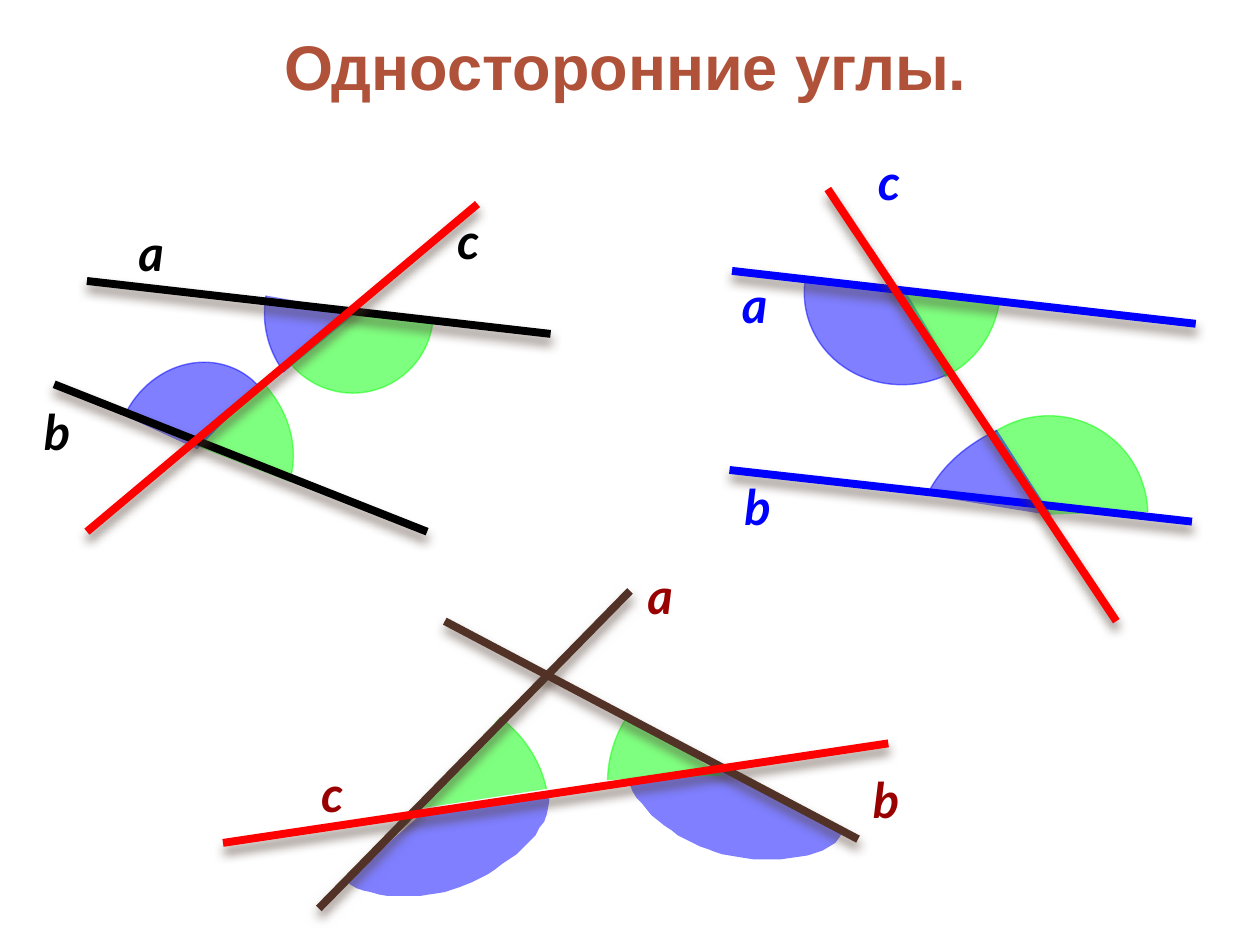
from lxml import etree
from pptx import Presentation
from pptx import util as u
from pptx.dml.color import RGBColor
from pptx.enum import shapes, text
from pptx.oxml.ns import qn

PX = 9144  # 100 px to the inch
COLORS = {
    "title": "B05239", "green": "00FF00", "blue": "0000FF", "black": "000000",
    "red": "FF0000", "brown": "523227", "maroon": "990000", "shadow": "4E3B30",
}

# Each angle: colour, box, rotation, arc start and end
# Each segment: x1, y1, x2, y2; each label: letter, left, top, width
FIGURES = [
    {
        "lines": "black", "letters": "black",
        "angles": [
            ("green", (62, 276, 174, 151), 32.4, 172.36, 209.16),
            ("blue", (210, 171, 148, 153), 193.7, 184.2, 213.79),
            ("blue", (86, 293, 141, 127), 297.9, 160.12, 9.95),
            ("green", (216, 184, 128, 128), 116.9, 150.57, 16.08),
        ],
        "sectors": [],
        "pair": [(69, 223, 437, 265), (43, 305, 339, 422)],
        "transversal": (69, 422, 379, 162),
        "labels": [("a", 100, 172, 41), ("b", 25, 314, 41), ("c", 353, 162, 36)],
    },
    {
        "lines": "blue", "letters": "blue",
        "angles": [
            ("green", (754, 330, 157, 157), 335.7, 156.62, 13.59),
            ("blue", (638, 155, 160, 150), 166.8, 151.64, 11.85),
            ("blue", (756, 302, 157, 214), 254.9, 176.61, 205.51),
            ("green", (637, 150, 157, 157), 73.9, 175.87, 209.95),
        ],
        "sectors": [],
        "pair": [(581, 215, 949, 257), (579, 373, 946, 414)],
        "transversal": (657, 150, 886, 493),
        "labels": [("a", 579, 213, 41), ("b", 581, 373, 41), ("c", 687, 115, 36)],
    },
    {
        "lines": "brown", "letters": "maroon",
        "angles": [
            ("green", (485, 521, 179, 189), 227.8, 185.98, 206.59),
            ("green", (233, 548, 203, 187), 11.5, 179.52, 203.85),
        ],
        # Two Bezier curves, then the vertex of the angle
        "sectors": [
            ([[(435, 630), (442, 659), (397, 691), (370, 702)],
              [(370, 702), (343, 714), (296, 716), (274, 699)]], (337, 644)),
            ([[(669, 660), (657, 686), (601, 685), (573, 678)],
              [(573, 678), (544, 671), (505, 644), (498, 618)]], (582, 611)),
        ],
        "pair": [(253, 721, 500, 469), (353, 493, 681, 666)],
        "transversal": (177, 669, 705, 590),
        "labels": [("a", 504, 444, 41), ("b", 683, 606, 41), ("c", 245, 601, 36)],
    },
]


def rgb(name):
    return RGBColor.from_string(COLORS[name])


def emu(*lengths):
    return [length * PX for length in lengths]


def fill_half_clear(shape, color):
    shape.shadow.inherit = False
    shape.fill.solid()
    shape.fill.fore_color.rgb = rgb(color)
    for tint in shape._element.spPr.iter(qn("a:srgbClr")):
        etree.SubElement(tint, qn("a:alpha"), val="50000")


def add_angle(slide, color, box, rotation, start, end):
    angle = slide.shapes.add_shape(shapes.MSO_SHAPE.ARC, *emu(*box))
    angle.rotation = rotation
    angle.adjustments[0], angle.adjustments[1] = start, end
    angle.line.color.rgb = rgb(color)
    angle.line.width = u.Pt(0.79)
    fill_half_clear(angle, color)


def bezier_points(p0, p1, p2, p3, steps=16):
    for i in range(1, steps + 1):
        t = i / steps
        s = 1 - t
        yield tuple(s**3 * a + 3 * s * s * t * b + 3 * s * t * t * c + t**3 * d
                    for a, b, c, d in zip(p0, p1, p2, p3))


def add_sector(slide, curves, vertex):
    rim = [point for curve in curves for point in bezier_points(*curve)]
    builder = slide.shapes.build_freeform(*curves[0][0], scale=PX)
    builder.add_line_segments(rim + [vertex], close=True)
    sector = builder.convert_to_shape()
    sector.line.fill.background()
    fill_half_clear(sector, "blue")


def add_segment(slide, ends, color):
    segment = slide.shapes.add_connector(shapes.MSO_CONNECTOR.STRAIGHT, *emu(*ends))
    segment.line.color.rgb = rgb(color)
    segment.line.width = u.Pt(4.5)
    # Soft shadow straight below the line
    effects = etree.SubElement(segment._element.spPr, qn("a:effectLst"))
    shadow = etree.SubElement(effects, qn("a:outerShdw"), blurRad=str(u.Pt(6)),
                              dist=str(u.Pt(4)), dir="5400000", rotWithShape="0")
    tint = etree.SubElement(shadow, qn("a:srgbClr"), val=COLORS["shadow"])
    etree.SubElement(tint, qn("a:alpha"), val="60000")


def add_run(paragraph, words, font, size, color, italic=False):
    run = paragraph.add_run()
    run.text = words
    run.font.name, run.font.size = font, u.Pt(size)
    run.font.bold, run.font.italic = True, italic
    run.font.color.rgb = rgb(color)


def add_label(slide, letter, left, top, width, color):
    frame = slide.shapes.add_textbox(*emu(left, top, width, 57)).text_frame
    frame.word_wrap = False
    frame.auto_size = text.MSO_AUTO_SIZE.SHAPE_TO_FIT_TEXT
    add_run(frame.paragraphs[0], letter, "Lato", 28, color, italic=True)


def set_title(slide, words):
    title = slide.shapes.title
    title.left, title.top, title.width, title.height = emu(20, 13, 953, 78)
    frame = title.text_frame
    frame.word_wrap = False
    frame.auto_size = text.MSO_AUTO_SIZE.NONE
    frame.vertical_anchor = text.MSO_ANCHOR.MIDDLE
    frame.paragraphs[0].alignment = text.PP_ALIGN.CENTER
    add_run(frame.paragraphs[0], words, "Arial", 36, "title")


def add_figure(slide, figure):
    # Angles lie under the lines
    for curves, vertex in figure["sectors"]:
        add_sector(slide, curves, vertex)
    for angle in figure["angles"]:
        add_angle(slide, *angle)
    # Lines a and b, then the transversal c
    for ends in figure["pair"]:
        add_segment(slide, ends, figure["lines"])
    add_segment(slide, figure["transversal"], "red")
    for label in figure["labels"]:
        add_label(slide, *label, figure["letters"])


def main():
    deck = Presentation()
    deck.slide_width, deck.slide_height = emu(1000, 750)
    slide = deck.slides.add_slide(deck.slide_layouts[5])
    set_title(slide, "Односторонние углы.")
    for figure in FIGURES:
        add_figure(slide, figure)
    deck.save("out.pptx")


if __name__ == "__main__":
    main()
